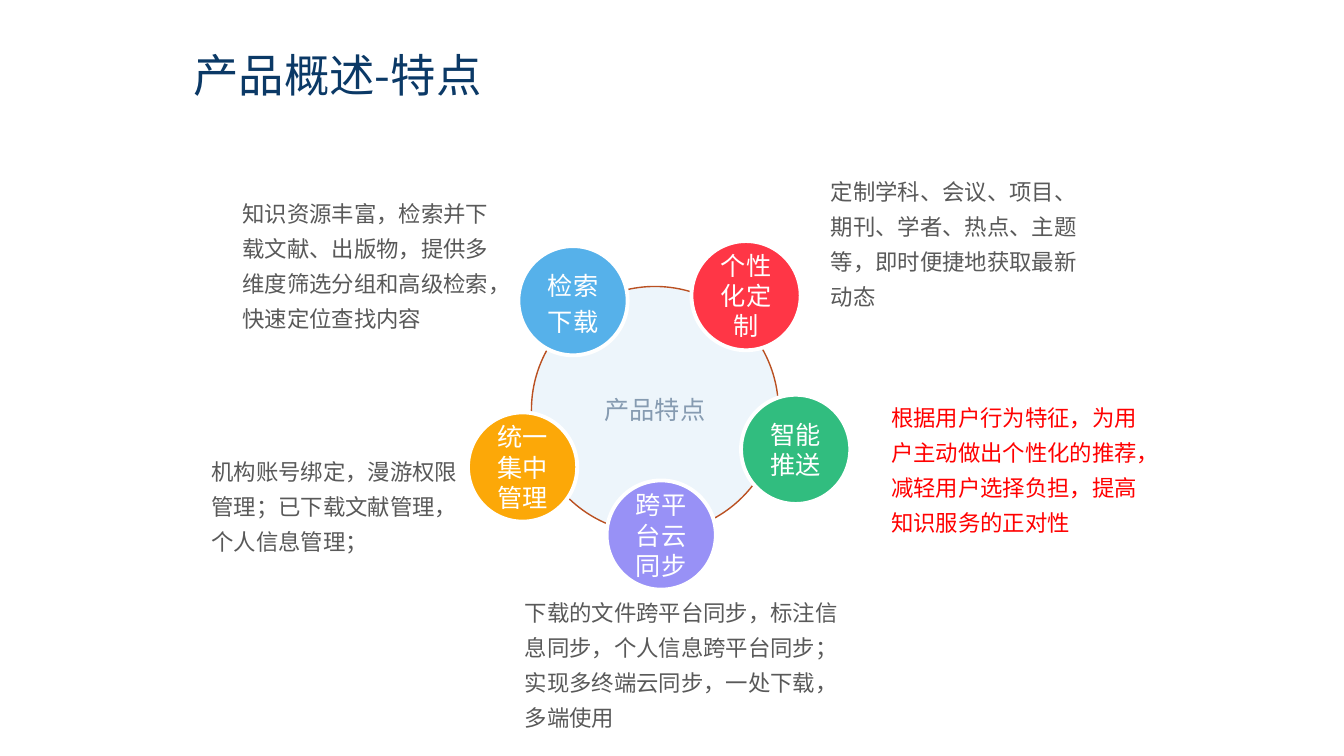
from pptx import Presentation
from pptx.dml.color import RGBColor as Rgb
from pptx.enum.shapes import MSO_SHAPE as Shape
from pptx.enum.text import MSO_ANCHOR as Anchor, PP_ALIGN as Align
from pptx.oxml.ns import qn
from pptx.util import Inches, Pt
from lxml import etree

FONT = "Noto Sans CJK SC"
CELL = Inches(7.5) / 90
BALL = 13
GREY = "595959"

BALLS = [
    (61.7, 29.3, "56B1EA", ["检索", "下载"], 1.2),
    (55.7, 49.1, "FCA808", ["统一集中管理"], 1),
    (82.3, 28.7, "FF3646", ["个性化定制"], 1),
    (72.2, 57.2, "9891F6", ["跨平台云同步"], 1),
    (88.2, 47, "31BD7F", ["智能推送"], 1),
]

NOTES = [
    (27.7, 22.3, 33.2, 18, GREY,
     ["知识资源丰富，检索并下载文献、出版物，提供多维度筛选分组和高级检索，快速定位查找内容"]),
    (97.7, 19.7, 34.2, 18, GREY,
     ["定制学科、会议、项目、期刊、学者、热点、主题等，即时便捷地获取最新动态"]),
    (61.3, 69.8, 41.5, 22.2, GREY,
     ["下载的文件跨平台同步，标注信息同步，个人信息跨平台同步；",
      "实现多终端云同步，一处下载，多端使用"]),
    (104.9, 46.6, 31.7, 22.2, "FF0000",
     ["根据用户行为特征，为用户主动做出个性化的推荐，减轻用户选择负担，提高知识服务的正对性"]),
    (24, 53, 33.2, 13.8, GREY,
     ["机构账号绑定，漫游权限管理；已下载文献管理，个人信息管理；"]),
]


def color(text):
    return Rgb.from_string(text)


def grid(*cells):
    return [round(cell * CELL) for cell in cells]


def write(shape, lines, size, ink, space=1, align=Align.LEFT, anchor=Anchor.TOP):
    frame = shape.text_frame
    frame.word_wrap = True
    frame.vertical_anchor = anchor
    frame.text = "\n".join(lines)
    for para in frame.paragraphs:
        para.alignment = align
        para.line_spacing = space
        para.font.size = Pt(size)
        para.font.color.rgb = color(ink)
        para.font.name = FONT
        base = para._p.pPr.find(qn("a:defRPr"))
        etree.SubElement(base, qn("a:ea"), typeface=FONT)


def add_disc(slide, left, top, side, fill, edge, width, lines, ink, space=1):
    disc = slide.shapes.add_shape(Shape.OVAL, *grid(left, top, side, side))
    disc.shadow.inherit = False
    disc.fill.solid()
    disc.fill.fore_color.rgb = color(fill)
    disc.line.color.rgb = color(edge)
    disc.line.width = Pt(width)
    write(disc, lines, 18, ink, space, Align.CENTER, Anchor.MIDDLE)


def add_text(slide, left, top, wide, high, lines, size, ink, space, anchor=Anchor.TOP):
    box = slide.shapes.add_textbox(*grid(left, top, wide, high))
    write(box, lines, size, ink, space, anchor=anchor)


def main():
    deck = Presentation()
    deck.slide_width, deck.slide_height = Inches(13.33), Inches(7.5)
    slide = deck.slides.add_slide(deck.slide_layouts[6])
    add_text(slide, 21.85, 5.3, 42, 8.3, ["产品概述-特点"], 32.4, "0B3966", 0.8, Anchor.MIDDLE)
    add_disc(slide, 63.25, 34.1, 29.4, "EDF5FB", "BA5021", 1, ["产品特点"], "869BB1")
    for left, top, fill, lines, space in BALLS:
        add_disc(slide, left, top, BALL, fill, "FFFFFF", 2.75, lines, "FFFFFF", space)
    for left, top, wide, high, ink, lines in NOTES:
        add_text(slide, left, top, wide, high, lines, 16, ink, 1.3)
    deck.save("out.pptx")


if __name__ == "__main__":
    main()
